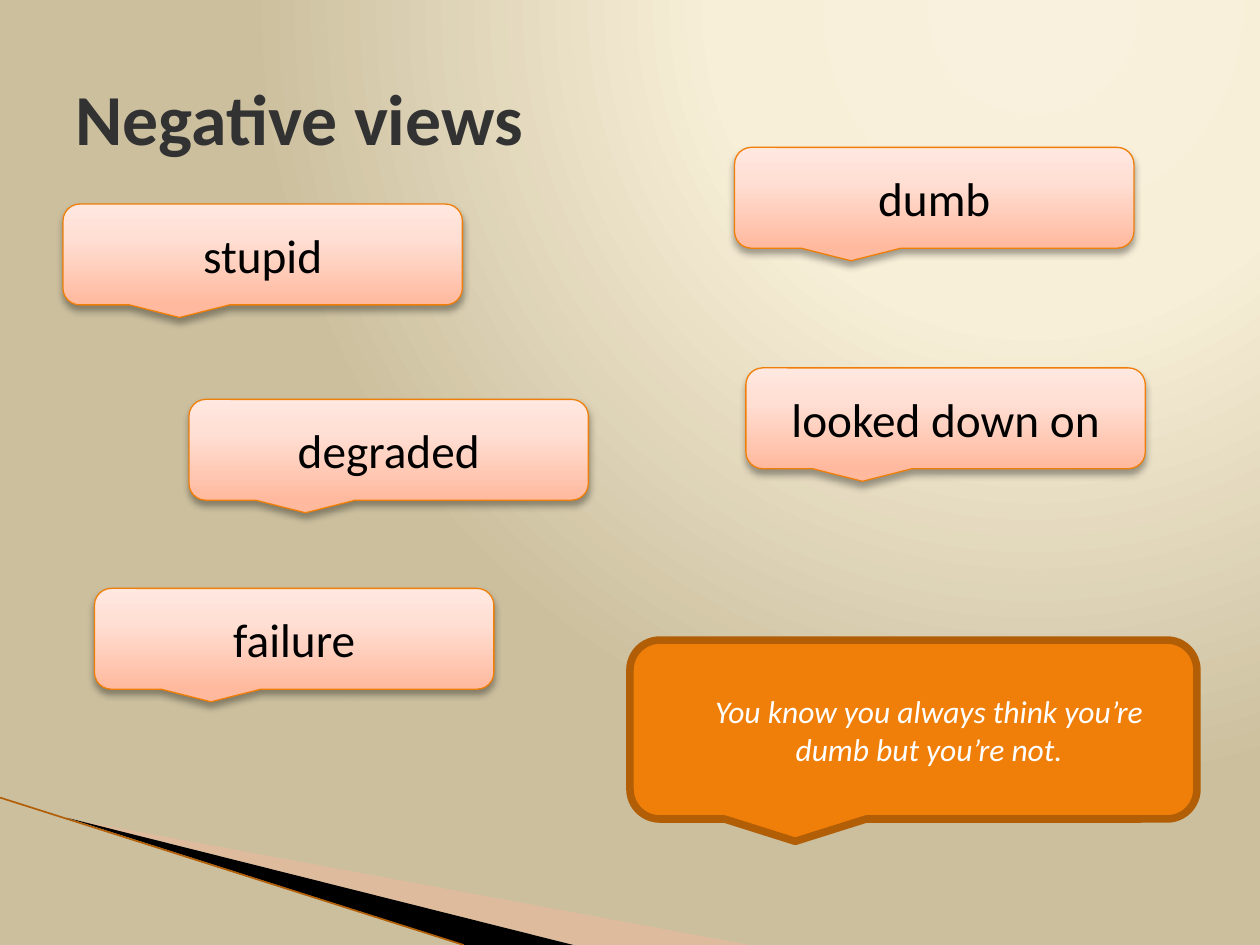
from pptx import Presentation
from pptx.dml.color import RGBColor
from pptx.enum.shapes import MSO_CONNECTOR, MSO_SHAPE
from pptx.enum.text import MSO_ANCHOR, MSO_AUTO_SIZE, PP_ALIGN
from pptx.oxml import parse_xml
from pptx.oxml.ns import nsdecls, qn
from pptx.util import Inches, Pt

CALLOUT = MSO_SHAPE.ROUNDED_RECTANGULAR_CALLOUT
STRAIGHT = MSO_CONNECTOR.STRAIGHT
MIDDLE = MSO_ANCHOR.MIDDLE
FIXED = MSO_AUTO_SIZE.NONE
LEFT, CENTER = PP_ALIGN.LEFT, PP_ALIGN.CENTER

BLACK = RGBColor(0x00, 0x00, 0x00)
WHITE = RGBColor(0xFF, 0xFF, 0xFF)
GRAY = RGBColor(0x32, 0x32, 0x32)
ORANGE = RGBColor(0xF0, 0x7F, 0x09)
BROWN = RGBColor(0xB2, 0x5E, 0x07)
PEACH = RGBColor(0xFC, 0xB7, 0x9B)
SAND = [(0, RGBColor(0xF9, 0xF1, 0xDE)), (40, RGBColor(0xF8, 0xEF, 0xD8)),
        (100, RGBColor(0xCB, 0xBF, 0x9E))]
BLUSH = [(0, RGBColor(0xFF, 0xB9, 0x9E)), (65, RGBColor(0xFF, 0xDE, 0xD3)),
         (100, RGBColor(0xFF, 0xE8, 0xE0))]
RADIAL = ('<a:path path="circle"><a:fillToRect l="65000" t="0" r="0" '
          'b="98000"/></a:path>')
UPWARD = '<a:lin ang="16200000" scaled="0"/>'

VIEWS = [("dumb", 5.83, 1.17), ("degraded", 1.5, 3.17),
         ("looked down on", 5.92, 2.92), ("failure", 0.75, 4.67)]


def blend(fill, root, stops, course):
    """Give fill, which lies under root, a gradient along course."""
    fill.gradient()
    old = root.find(".//" + qn("a:gradFill"))
    marks = "".join(
        f'<a:gs pos="{pos * 1000}"><a:srgbClr val="{color}"/></a:gs>'
        for pos, color in stops)
    new = parse_xml(f'<a:gradFill {nsdecls("a")} rotWithShape="1">'
                    f'<a:gsLst>{marks}</a:gsLst>{course}</a:gradFill>')
    old.getparent().replace(old, new)


def write(shape, text, size, color, align=CENTER, bold=False, italic=False,
          indent=0):
    frame = shape.text_frame
    frame.word_wrap = True
    frame.auto_size = FIXED
    frame.vertical_anchor = MIDDLE
    frame.text = text
    para = frame.paragraphs[0]
    props = para._p.get_or_add_pPr()
    props.set("marL", str(Inches(indent)))
    props.set("indent", "0")
    props.append(parse_xml(f'<a:buNone {nsdecls("a")}/>'))
    para.alignment = align
    para.space_before = Pt(0)
    font = para.runs[0].font
    font.name = "Calibri"
    font.size = Pt(size)
    font.bold = bold
    font.italic = italic
    font.color.rgb = color


def place(shape, left, top, width, height):
    shape.left, shape.top = Inches(left), Inches(top)
    shape.width, shape.height = Inches(width), Inches(height)


class Deck:
    def __init__(self):
        self.prs = Presentation()
        self.prs.slide_width = Inches(10)
        self.prs.slide_height = Inches(7.5)
        self.slide = self.prs.slides.add_slide(self.prs.slide_layouts[1])
        self.shapes = self.slide.shapes
        blend(self.slide.background.fill, self.slide.element, SAND, RADIAL)

    def wedge(self, points, color, alpha=100):
        spots = [(Inches(x), Inches(y)) for x, y in points]
        pen = self.shapes.build_freeform(*spots[0])
        pen.add_line_segments(spots[1:])
        shape = pen.convert_to_shape()
        shape.shadow.inherit = False
        shape.fill.solid()
        shape.fill.fore_color.rgb = color
        shape.line.fill.background()
        if alpha < 100:
            tint = shape.element.spPr.find(".//" + qn("a:srgbClr"))
            tint.append(parse_xml(
                f'<a:alpha {nsdecls("a")} val="{alpha * 1000}"/>'))

    def line(self, start, end, color, width):
        ends = [Inches(v) for v in (*start, *end)]
        line = self.shapes.add_connector(STRAIGHT, *ends)
        line.line.color.rgb = color
        line.line.width = Pt(width)
        line.element.spPr.append(parse_xml(f'<a:effectLst {nsdecls("a")}/>'))

    def title(self, text):
        shape = self.shapes.title
        place(shape, 0.5, 0.3, 9, 1.25)
        write(shape, text, 41, GRAY, align=LEFT, bold=True)

    def body(self, text, left, top):
        """Turn the body placeholder into a view bubble."""
        shape = self.slide.placeholders[1]
        place(shape, left, top, 3.17, 0.8)
        shape.element.spPr.append(parse_xml(
            f'<a:prstGeom {nsdecls("a")} prst="wedgeRoundRectCallout">'
            '<a:avLst/></a:prstGeom>'))
        self.style(shape, text)

    def view(self, text, left, top):
        size = (left, top, 3.17, 0.8)
        shape = self.shapes.add_shape(CALLOUT, *map(Inches, size))
        self.style(shape, text)

    def style(self, shape, text):
        """Format a view bubble."""
        blend(shape.fill, shape.element.spPr, BLUSH, UPWARD)
        shape.line.color.rgb = ORANGE
        shape.line.width = Pt(0.75)
        shape.shadow.inherit = False
        shape.element.spPr.find(qn("a:effectLst")).append(parse_xml(
            f'<a:outerShdw {nsdecls("a")} blurRad="{Pt(4)}" dist="{Pt(3)}" '
            'dir="5400000" rotWithShape="0"><a:srgbClr val="000000">'
            '<a:alpha val="35000"/></a:srgbClr></a:outerShdw>'))
        write(shape, text, 27, BLACK)

    def quote(self, text, left, top, width, height):
        size = (left, top, width, height)
        shape = self.shapes.add_shape(CALLOUT, *map(Inches, size))
        shape.shadow.inherit = False
        shape.fill.solid()
        shape.fill.fore_color.rgb = ORANGE
        shape.line.color.rgb = BROWN
        shape.line.width = Pt(4.33)
        write(shape, text, 18, WHITE, italic=True, indent=0.25)


def main():
    deck = Deck()
    deck.wedge([(0.55, 6.5), (5.95, 7.5), (4.56, 7.5)], PEACH, alpha=40)
    deck.wedge([(0.53, 6.49), (4.55, 7.5), (3.69, 7.5)], BLACK)
    deck.line((0, 6.33), (3.68, 7.5), BROWN, 0.95)
    deck.title("Negative views")
    deck.body("stupid", 0.5, 1.62)
    for text, left, top in VIEWS:
        deck.view(text, left, top)
    deck.quote("You know you always think you’re dumb but you’re not.",
               5, 5.08, 4.5, 1.42)
    deck.prs.save("out.pptx")


if __name__ == "__main__":
    main()
